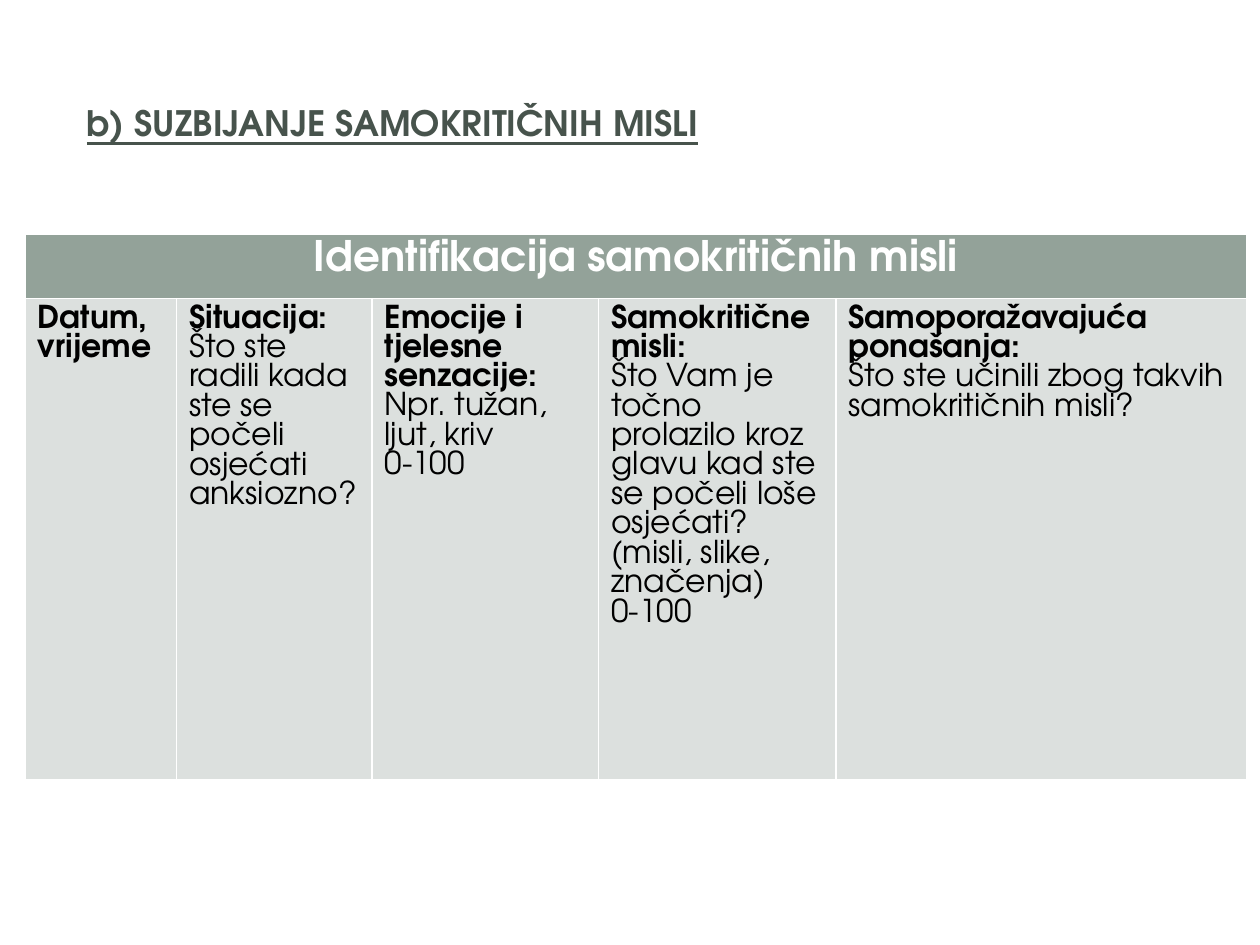
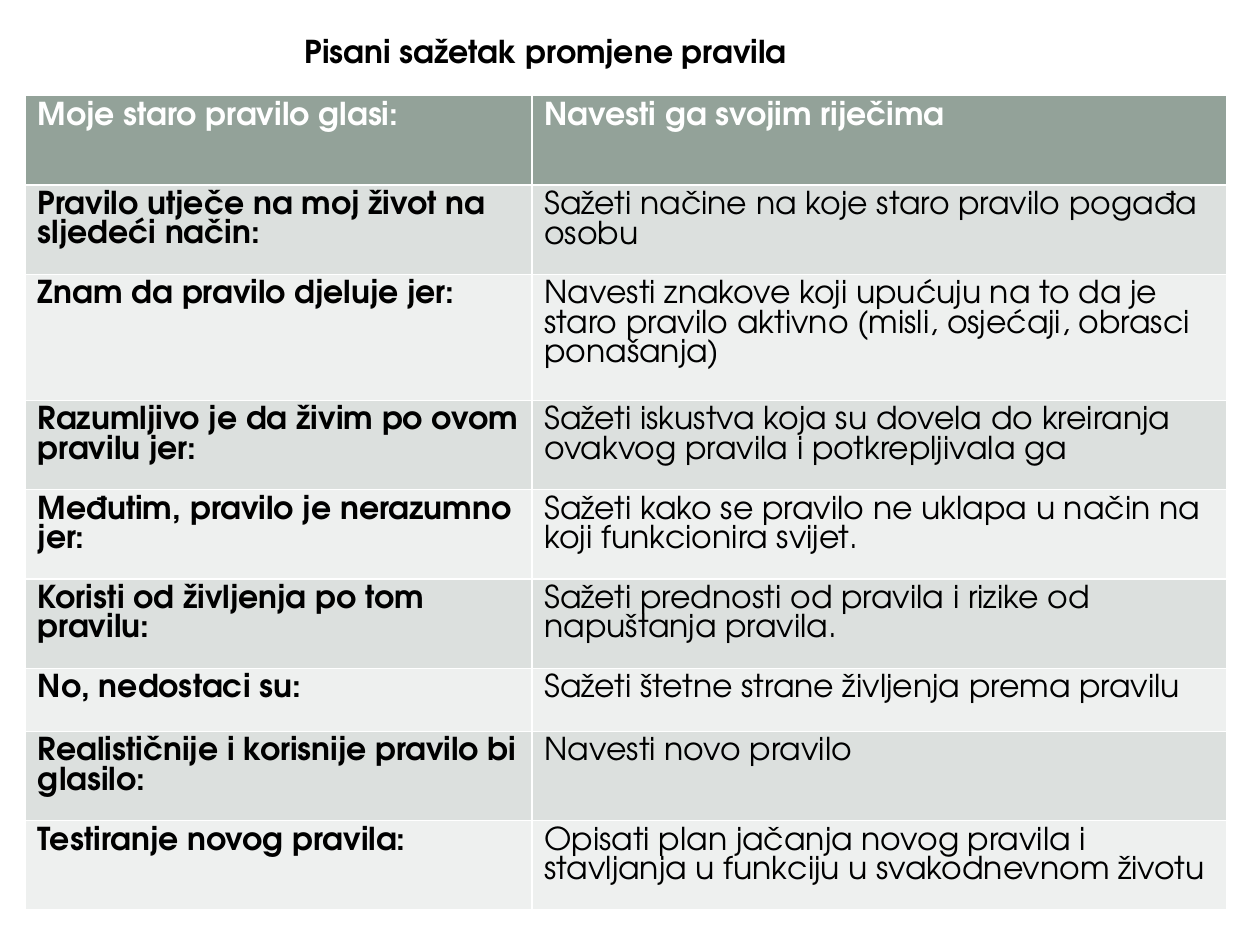
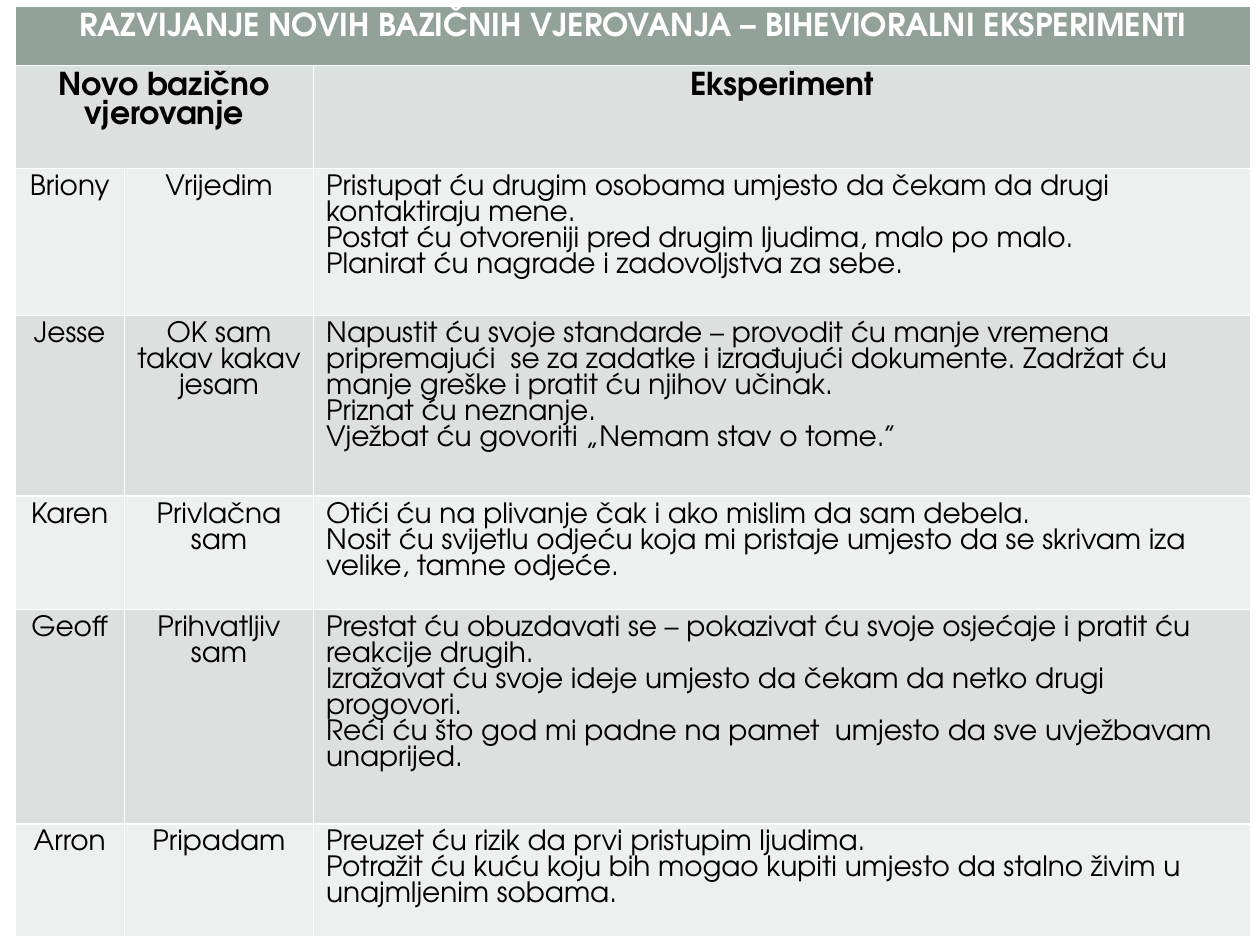
import pptx
import pptx.util
import pptx.dml.color
import pptx.enum.text

Cm = pptx.util.Cm
Pt = pptx.util.Pt
FACE = "TeX Gyre Adventor"
HEAD = "93A299"
BANDS = ["DCE0DE", "EEF0EF"]
WHITE, BLACK, GREEN = "FFFFFF", "000000", "47534C"
LEFT = pptx.enum.text.PP_ALIGN.LEFT
MID = pptx.enum.text.PP_ALIGN.CENTER


def color(code):
    return pptx.dml.color.RGBColor.from_string(code)


def write(frame, text, size, ink, align=LEFT):
    for i, line in enumerate(text.split("\n")):
        para = frame.add_paragraph() if i else frame.paragraphs[0]
        para.alignment = align
        para.font.name = FACE
        para.font.size = Pt(size)
        para.font.color.rgb = color(ink)
        bold, mark, plain = line.rpartition("|")
        for part, heavy in [(bold, True), (plain, False)]:
            if part:
                run = para.add_run()
                run.text = part
                run.font.bold = heavy


# Text before "|" is bold.
thoughts = [
    ["Identifikacija samokritičnih misli|", "", "", "", ""],
    ["Datum, vrijeme|",
     "Situacija: |Što ste radili kada ste se počeli osjećati anksiozno?",
     "Emocije i tjelesne senzacije: |Npr. tužan, ljut, kriv\n0-100",
     "Samokritične misli:|\nŠto Vam je točno prolazilo kroz glavu kad ste se "
     "počeli loše osjećati? (misli, slike, značenja)\n0-100",
     "Samoporažavajuća ponašanja:|\n"
     "Što ste učinili zbog takvih samokritičnih misli?"],
]
rules = [
    ["Moje staro pravilo glasi:|", "Navesti ga svojim riječima|"],
    ["Pravilo utječe na moj život na sljedeći način:|",
     "Sažeti načine na koje staro pravilo pogađa osobu"],
    ["Znam da pravilo djeluje jer:|",
     "Navesti znakove koji upućuju na to da je staro pravilo aktivno "
     "(misli, osjećaji, obrasci ponašanja)"],
    ["Razumljivo je da živim po ovom pravilu jer:|",
     "Sažeti iskustva koja su dovela do kreiranja ovakvog pravila "
     "i potkrepljivala ga"],
    ["Međutim, pravilo je nerazumno jer:|",
     "Sažeti kako se pravilo ne uklapa u način na koji funkcionira svijet."],
    ["Koristi od življenja po tom pravilu:|",
     "Sažeti prednosti od pravila i rizike od napuštanja pravila."],
    ["No, nedostaci su:|", "Sažeti štetne strane življenja prema pravilu"],
    ["Realističnije i korisnije pravilo bi glasilo:|", "Navesti novo pravilo"],
    ["Testiranje novog pravila:|",
     "Opisati plan jačanja novog pravila i stavljanja u funkciju "
     "u svakodnevnom životu"],
]
beliefs = [
    ["RAZVIJANJE NOVIH BAZIČNIH VJEROVANJA – BIHEVIORALNI EKSPERIMENTI|",
     "", ""],
    ["Novo bazično vjerovanje|", "", "Eksperiment|"],
    ["Briony", "Vrijedim",
     "Pristupat ću drugim osobama umjesto da čekam da drugi kontaktiraju "
     "mene.\nPostat ću otvoreniji pred drugim ljudima, malo po malo.\n"
     "Planirat ću nagrade i zadovoljstva za sebe."],
    ["Jesse", "OK sam takav kakav jesam",
     "Napustit ću svoje standarde – provodit ću manje vremena "
     "pripremajući  se za zadatke i izrađujući dokumente. Zadržat ću manje "
     "greške i pratit ću njihov učinak.\nPriznat ću neznanje.\n"
     "Vježbat ću govoriti „Nemam stav o tome.”"],
    ["Karen", "Privlačna sam",
     "Otići ću na plivanje čak i ako mislim da sam debela.\n"
     "Nosit ću svijetlu odjeću koja mi pristaje umjesto da se skrivam iza "
     "velike, tamne odjeće."],
    ["Geoff", "Prihvatljiv sam",
     "Prestat ću obuzdavati se – pokazivat ću svoje osjećaje i pratit ću "
     "reakcije drugih.\nIzražavat ću svoje ideje umjesto da čekam da netko "
     "drugi progovori.\nReći ću što god mi padne na pamet  umjesto da sve "
     "uvježbavam unaprijed."],
    ["Arron", "Pripadam",
     "Preuzet ću rizik da prvi pristupim ljudima.\n"
     "Potražit ću kuću koju bih mogao kupiti umjesto da stalno živim u "
     "unajmljenim sobama."],
]

pages = [
    dict(rows=thoughts, left=0.51, top=4.72, wide=[3.05, 3.94, 4.57, 4.78, 8.28],
         high=[1.3, 9.7], spans=[(0, 0, 4)], top_size=24, size=18, mid=[(0, 0)],
         title=("b) SUZBIJANJE SAMOKRITIČNIH MISLI|", 1.5, 1.93, 15.8, 1.12,
                20, GREEN)),
    dict(rows=rules, left=0.51, top=1.93, wide=[10.21, 14],
         high=[1.8] * 6 + [1.27] + [1.8] * 2, spans=[], top_size=18, size=18,
         mid=[],
         title=("Pisani sažetak promjene pravila|", 5.89, 0.53, 10.36, 1.02,
                18, BLACK)),
    dict(rows=beliefs, left=0.3, top=0.13, wide=[2.21, 3.81, 18.9],
         high=[1.19] + [2.08] * 6, spans=[(0, 0, 2), (1, 0, 1)], top_size=18,
         size=16, mid=[(r, c) for r in range(7) for c in range(3)
                       if r < 2 or c < 2],
         title=None),
]

deck = pptx.Presentation()
deck.slide_width, deck.slide_height = Cm(25.4), Cm(19.05)

for page in pages:
    slide = deck.slides.add_slide(deck.slide_layouts[6])
    rows, wide, high = page["rows"], page["wide"], page["high"]
    grid = slide.shapes.add_table(
        len(rows), len(wide), Cm(page["left"]), Cm(page["top"]),
        Cm(sum(wide)), Cm(sum(high))).table
    for c, size in enumerate(wide):
        grid.columns[c].width = Cm(size)
    for r, size in enumerate(high):
        grid.rows[r].height = Cm(size)
    for r, c, end in page["spans"]:
        grid.cell(r, c).merge(grid.cell(r, end))
    for r, row in enumerate(rows):
        for c, text in enumerate(row):
            cell = grid.cell(r, c)
            cell.fill.solid()
            cell.fill.fore_color.rgb = color(BANDS[(r - 1) % 2] if r else HEAD)
            if not cell.is_spanned:
                size = page["top_size"] if r == 0 else page["size"]
                if r and text.endswith("|"):
                    size = 18
                write(cell.text_frame, text, size, BLACK if r else WHITE,
                      MID if (r, c) in page["mid"] else LEFT)
    if page["title"]:
        text, left, top, width, height, size, ink = page["title"]
        frame = slide.shapes.add_textbox(
            Cm(left), Cm(top), Cm(width), Cm(height)).text_frame
        frame.word_wrap = ink == GREEN
        write(frame, text, size, ink)
        frame.paragraphs[0].runs[0].font.underline = ink == GREEN

deck.save("out.pptx")
